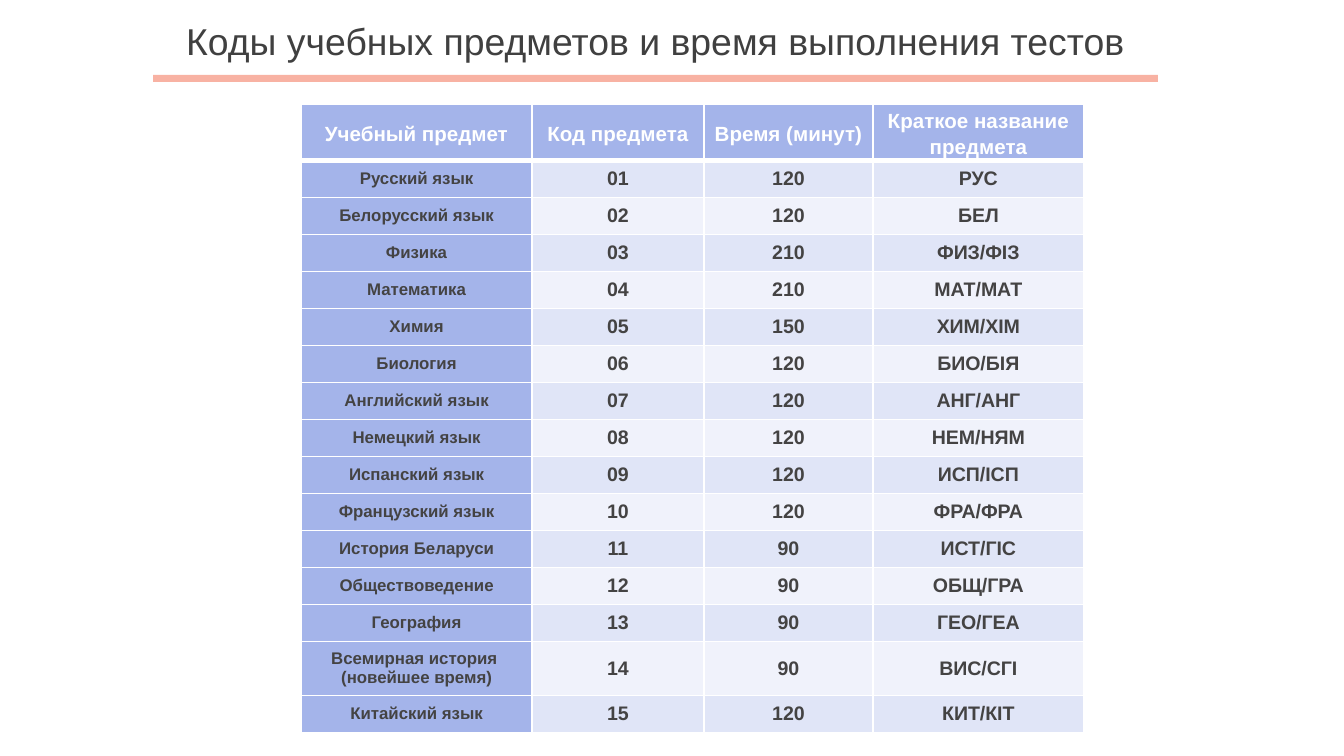
from lxml.etree import SubElement as Sub
from pptx import Presentation
from pptx.dml.color import RGBColor as Rgb
from pptx.enum.shapes import MSO_SHAPE as Shape
from pptx.enum.text import MSO_ANCHOR as Anchor, PP_ALIGN as Align
from pptx.oxml.ns import qn
from pptx.util import Pt

SCALE = 914400 / 134.4
FONT = "Arial"
HEX = {
    "title": "404040",
    "bar": "F8B2A3",
    "head": "A4B4EA",
    "odd": "E0E5F7",
    "even": "F0F2FB",
    "text": "444343",
    "white": "FFFFFF",
}
HEADS = ["Учебный предмет", "Код предмета", "Время (минут)", "Краткое название предмета"]
TESTS = [
    ("Русский язык", 120, "РУС"),
    ("Белорусский язык", 120, "БЕЛ"),
    ("Физика", 210, "ФИЗ/ФІЗ"),
    ("Математика", 210, "МАТ/МАТ"),
    ("Химия", 150, "ХИМ/ХІМ"),
    ("Биология", 120, "БИО/БІЯ"),
    ("Английский язык", 120, "АНГ/АНГ"),
    ("Немецкий язык", 120, "НЕМ/НЯМ"),
    ("Испанский язык", 120, "ИСП/ІСП"),
    ("Французский язык", 120, "ФРА/ФРА"),
    ("История Беларуси", 90, "ИСТ/ГІС"),
    ("Обществоведение", 90, "ОБЩ/ГРА"),
    ("География", 90, "ГЕО/ГЕА"),
    ("Всемирная история \n(новейшее время)", 90, "ВИС/СГІ"),
    ("Китайский язык", 120, "КИТ/КІТ"),
]
WIDTHS = [231, 172, 169, 211]
HEAD_H, ROW_H, TALL_H = 56, 37, 54


def px(num):
    """Turn pixels into EMU."""
    return round(num * SCALE)


def tint(name):
    """Return the named colour."""
    return Rgb.from_string(HEX[name])


def write(frame, text, size, color, bold=False, lead=None):
    """Write centred lines of text into a frame."""
    for num, line in enumerate(text.split("\n")):
        para = frame.add_paragraph() if num else frame.paragraphs[0]
        para.alignment = Align.CENTER
        if lead:
            para.line_spacing = lead
        run = para.add_run()
        run.text = line
        run.font.name, run.font.size, run.font.bold = FONT, Pt(size), bold
        run.font.color.rgb = tint(color)


def edge(cell, top, base):
    """Draw white cell borders with the given top and base widths."""
    props = cell._tc.get_or_add_tcPr()
    for side, width in (("L", 1), ("R", 1), ("T", top), ("B", base)):
        line = Sub(props, qn("a:ln" + side), w=str(Pt(width)))
        Sub(Sub(line, qn("a:solidFill")), qn("a:srgbClr"), val=HEX["white"])


def add_head(slide, left, top, width):
    """Place the title and the bar below it."""
    box = slide.shapes.add_textbox(px(left), px(top), px(width), px(59))
    box.text_frame.word_wrap = True
    write(box.text_frame, "Коды учебных предметов и время выполнения тестов", 20, "title")
    bar = slide.shapes.add_shape(Shape.RECTANGLE, px(left), px(top + 63), px(width), px(7))
    bar.shadow.inherit = False
    bar.fill.solid()
    bar.fill.fore_color.rgb = tint("bar")
    bar.line.fill.background()


def fill_cell(cell, text, row, col):
    """Style one table cell and write its text."""
    edge(cell, 3 if row == 1 else 1, 1 if row else 3)
    cell.fill.solid()
    band = "odd" if row % 2 else "even"
    cell.fill.fore_color.rgb = tint(band if row and col else "head")
    cell.vertical_anchor = Anchor.MIDDLE
    if row:
        write(cell.text_frame, text, 10.5 if col else 9, "text", True)
    else:
        cell.margin_left = cell.margin_right = px(9)
        cell.margin_top = cell.margin_bottom = 0
        write(cell.text_frame, text, 11, "white", True, 1.15)


def add_grid(slide, left, top):
    """Place the table of subjects, codes and times."""
    rows = [HEADS]
    rows += [(name, f"{num:02}", str(time), short)
             for num, (name, time, short) in enumerate(TESTS, 1)]
    highs = [HEAD_H] + [TALL_H if "\n" in test[0] else ROW_H for test in TESTS]
    grid = slide.shapes.add_table(len(rows), len(WIDTHS), px(left), px(top),
                                  px(sum(WIDTHS)), px(sum(highs))).table
    for col, width in zip(grid.columns, WIDTHS):
        col.width = px(width)
    for row, high in zip(grid.rows, highs):
        row.height = px(high)
    for row, texts in enumerate(rows):
        for col, text in enumerate(texts):
            fill_cell(grid.cell(row, col), text, row, col)


def main():
    """Build and save the slide."""
    deck = Presentation()
    deck.slide_width, deck.slide_height = px(1344), px(756)
    slide = deck.slides.add_slide(deck.slide_layouts[6])
    add_head(slide, 153, 12, 1005)
    add_grid(slide, 301, 104)
    deck.save("out.pptx")


if __name__ == "__main__":
    main()
